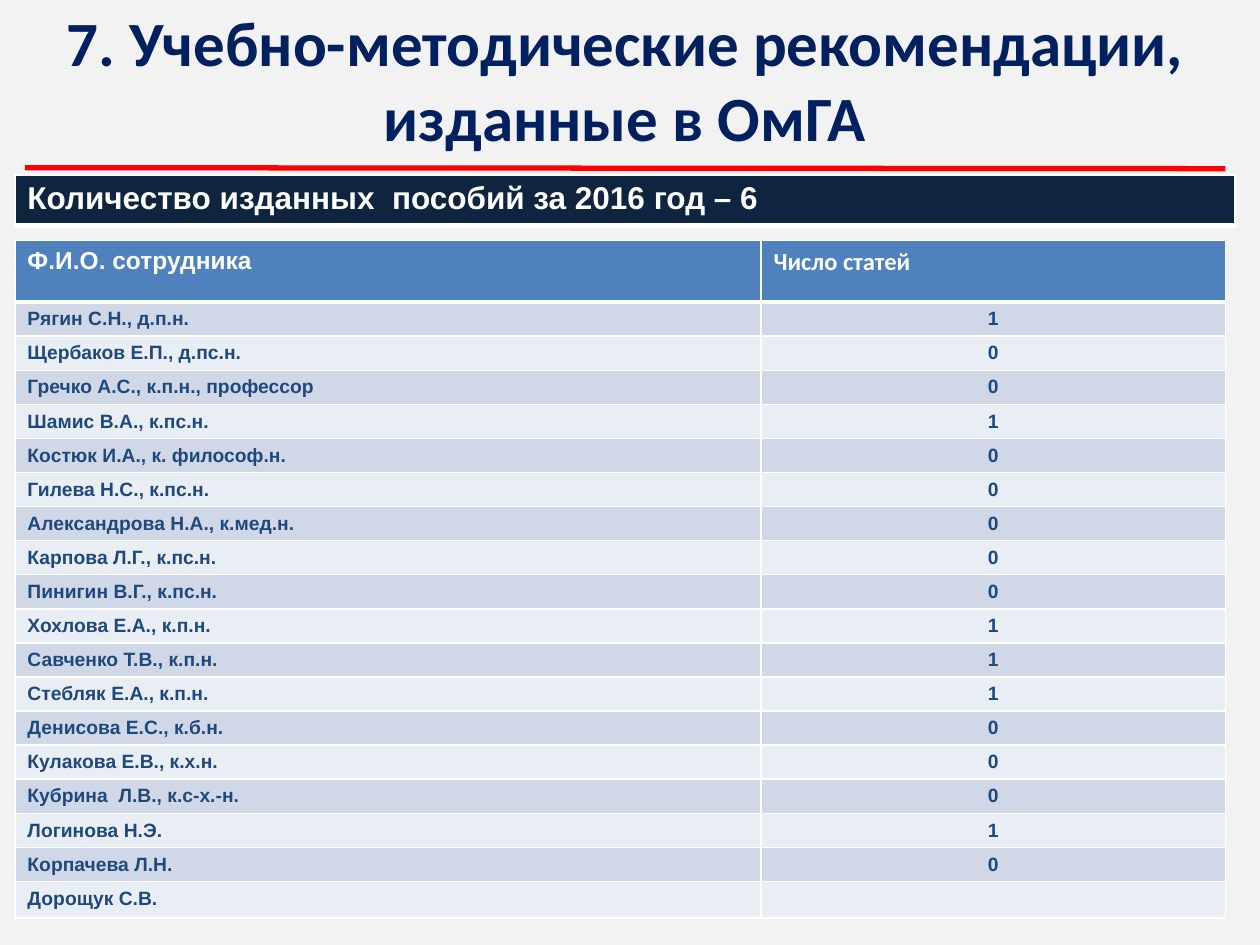
from pptx import Presentation
from pptx.dml.color import RGBColor
from pptx.enum import shapes, text
from pptx.oxml.ns import qn
from pptx.util import Cm, Pt
from lxml import etree

# Content
TITLE = "7. Учебно-методические рекомендации, изданные в ОмГА"
SUMMARY = "Количество изданных  пособий за 2016 год – 6"
HEADINGS = ("Ф.И.О. сотрудника", "Число статей")
STAFF = [
    ("Рягин С.Н., д.п.н.", "1"),
    ("Щербаков Е.П., д.пс.н.", "0"),
    ("Гречко А.С., к.п.н., профессор", "0"),
    ("Шамис В.А., к.пс.н.", "1"),
    ("Костюк И.А., к. философ.н.", "0"),
    ("Гилева Н.С., к.пс.н.", "0"),
    ("Александрова Н.А., к.мед.н.", "0"),
    ("Карпова Л.Г., к.пс.н.", "0"),
    ("Пинигин В.Г., к.пс.н.", "0"),
    ("Хохлова Е.А., к.п.н.", "1"),
    ("Савченко Т.В., к.п.н.", "1"),
    ("Стебляк Е.А., к.п.н.", "1"),
    ("Денисова Е.С., к.б.н.", "0"),
    ("Кулакова Е.В., к.х.н.", "0"),
    ("Кубрина  Л.В., к.с-х.-н.", "0"),
    ("Логинова Н.Э.", "1"),
    ("Корпачева Л.Н.", "0"),
    ("Дорощук С.В.", ""),
]

# Formats
LEFT, CENTER = text.PP_ALIGN.LEFT, text.PP_ALIGN.CENTER
TITLE_FONT = {"name": "Calibri", "size": Pt(36), "bold": True}
SUMMARY_FONT = {"name": "Arial", "size": Pt(18), "bold": True}
HEADING_FONTS = [{"name": name, "size": Pt(14), "bold": True} for name in ("Arial", "Calibri")]
STAFF_FONT = {"name": "Arial", "size": Pt(11), "bold": True}
BANDS = ("D0D8E8", "E9EDF4")
THIN, THICK = 1, 3


def rgb(value):
    return RGBColor.from_string(value)


def write(frame, words, font, color, align):
    paragraph = frame.paragraphs[0]
    paragraph.alignment = align
    if not words:
        # an empty cell still needs its text size, or the row grows
        end = etree.SubElement(paragraph._p, qn("a:endParaRPr"))
        end.set("sz", str(int(font["size"].pt * 100)))
        return
    run = paragraph.add_run()
    run.text = words
    for key, value in font.items():
        setattr(run.font, key, value)
    run.font.color.rgb = rgb(color)


def add_borders(cell, top, bottom):
    properties = cell._tc.get_or_add_tcPr()
    for side, width in (("L", THIN), ("R", THIN), ("T", top), ("B", bottom)):
        line = etree.SubElement(properties, qn(f"a:ln{side}"), w=str(Pt(width)))
        fill = etree.SubElement(line, qn("a:solidFill"))
        etree.SubElement(fill, qn("a:srgbClr"), val="FFFFFF")


def fill_cell(cell, words, font, color, background, align=LEFT, top=THIN, bottom=THIN):
    add_borders(cell, top, bottom)
    cell.fill.solid()
    cell.fill.fore_color.rgb = rgb(background)
    write(cell.text_frame, words, font, color, align)


def add_grid(slide, left, top, widths, heights):
    table = slide.shapes.add_table(len(heights), len(widths), Cm(left), Cm(top),
                                   Cm(sum(widths)), Cm(sum(heights))).table
    for column, width in zip(table.columns, widths):
        column.width = Cm(width)
    for row, height in zip(table.rows, heights):
        row.height = Cm(height)
    return table


def main():
    deck = Presentation()
    deck.slide_width, deck.slide_height = Cm(25.4), Cm(19.05)
    slide = deck.slides.add_slide(deck.slide_layouts[5])
    slide.background.fill.solid()
    slide.background.fill.fore_color.rgb = rgb("F2F2F2")

    # Title
    title = slide.shapes.title
    title.left, title.top, title.width, title.height = Cm(0.6), Cm(0), Cm(24), Cm(3.18)
    title.text_frame.vertical_anchor = text.MSO_ANCHOR.MIDDLE
    write(title.text_frame, TITLE, TITLE_FONT, "002060", CENTER)

    # Red rule under the title
    rule = slide.shapes.add_connector(shapes.MSO_CONNECTOR.STRAIGHT,
                                      Cm(0.5), Cm(3.38), Cm(24.7), Cm(3.4))
    rule.line.color.rgb = rgb("FF0000")
    rule.line.width = Pt(3)
    etree.SubElement(rule._element.spPr, qn("a:effectLst"))

    # Summary bar
    summary = add_grid(slide, 0.3, 3.53, [24.6], [1.02])
    fill_cell(summary.cell(0, 0), SUMMARY, SUMMARY_FONT, "FFFFFF", "0F243E", bottom=THICK)

    # Staff table
    staff = add_grid(slide, 0.3, 4.85, [15.04, 9.36], [1.24] + [0.66] * len(STAFF))
    for column, (heading, font) in enumerate(zip(HEADINGS, HEADING_FONTS)):
        fill_cell(staff.cell(0, column), heading, font, "FFFFFF", "4F81BD", bottom=THICK)
    for row, person in enumerate(STAFF, start=1):
        for column, (words, align) in enumerate(zip(person, (LEFT, CENTER))):
            fill_cell(staff.cell(row, column), words, STAFF_FONT, "1F497D",
                      BANDS[(row - 1) % 2], align, top=THICK if row == 1 else THIN)

    deck.save("out.pptx")


if __name__ == "__main__":
    main()
